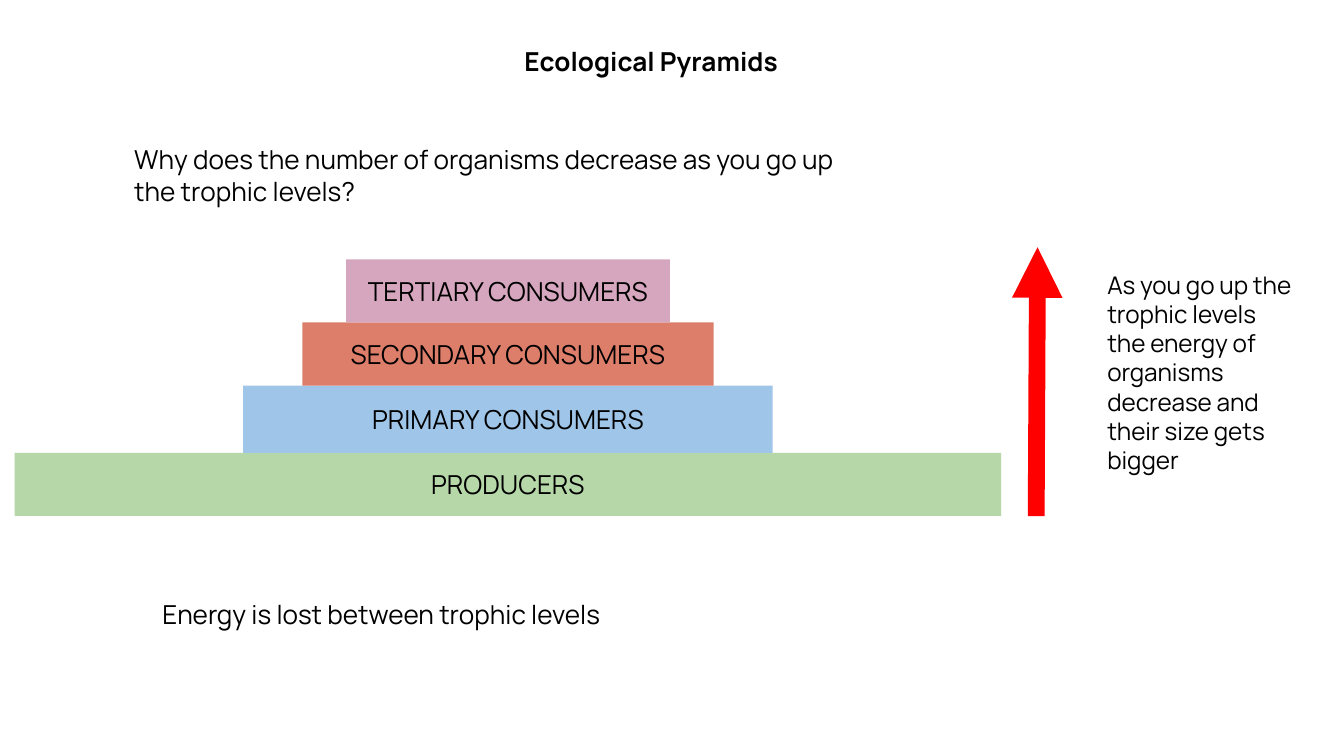
from pptx import Presentation
from pptx.dml.color import RGBColor
from pptx.enum.shapes import MSO_CONNECTOR, MSO_SHAPE
from pptx.enum.text import MSO_ANCHOR, MSO_AUTO_SIZE, PP_ALIGN
from pptx.oxml.ns import qn
from pptx.util import Inches, Pt
from lxml import etree

RECTANGLE = MSO_SHAPE.RECTANGLE
STRAIGHT = MSO_CONNECTOR.STRAIGHT
TOP, MIDDLE = MSO_ANCHOR.TOP, MSO_ANCHOR.MIDDLE
LEFT, CENTER = PP_ALIGN.LEFT, PP_ALIGN.CENTER
NO_FIT, GROW = MSO_AUTO_SIZE.NONE, MSO_AUTO_SIZE.SHAPE_TO_FIT_TEXT

FONT = "Manrope"
BLACK = RGBColor(0x00, 0x00, 0x00)
WHITE = RGBColor(0xFF, 0xFF, 0xFF)
RED = RGBColor(0xFF, 0x00, 0x00)
PINK = RGBColor(0xD5, 0xA6, 0xBD)
CORAL = RGBColor(0xDD, 0x7E, 0x6B)
BLUE = RGBColor(0x9F, 0xC5, 0xE8)
GREEN = RGBColor(0xB6, 0xD7, 0xA8)

# Name, width, height and colour, from the top of the pyramid down
TROPHIC_LEVELS = [
    ("TERTIARY CONSUMERS", 2.41, 0.47, PINK),
    ("SECONDARY CONSUMERS", 3.06, 0.47, CORAL),
    ("PRIMARY CONSUMERS", 3.94, 0.5, BLUE),
    ("PRODUCERS", 7.34, 0.47, GREEN),
]


def write_text(shape, text, size=14, bold=False, align=LEFT, anchor=TOP, fit=GROW):
    frame = shape.text_frame
    frame.word_wrap = True
    frame.auto_size = fit
    frame.vertical_anchor = anchor
    frame.margin_left = frame.margin_right = Inches(0.1)
    frame.margin_top = frame.margin_bottom = Inches(0.1)
    paragraph = frame.paragraphs[0]
    paragraph.alignment = align
    run = paragraph.add_run()
    run.text = text
    run.font.name = FONT
    run.font.size = Pt(size)
    run.font.bold = bold
    run.font.color.rgb = BLACK


def add_title(slide, left, top, width, height):
    title = slide.shapes.title
    title.left, title.top = Inches(left), Inches(top)
    title.width, title.height = Inches(width), Inches(height)
    write_text(title, "Ecological Pyramids ", bold=True, align=CENTER)


def add_note(slide, left, top, width, height, text, size=14):
    box = slide.shapes.add_textbox(
        Inches(left), Inches(top), Inches(width), Inches(height))
    write_text(box, text, size=size)


def add_pyramid(slide, left, bottom, width):
    """Stack the trophic levels up from the bottom, centred in the given width."""
    for name, level_width, height, color in reversed(TROPHIC_LEVELS):
        bottom -= height
        level = slide.shapes.add_shape(
            RECTANGLE, Inches(left + (width - level_width) / 2), Inches(bottom),
            Inches(level_width), Inches(height))
        level.shadow.inherit = False
        level.fill.solid()
        level.fill.fore_color.rgb = color
        level.line.fill.background()
        write_text(level, name, align=CENTER, anchor=MIDDLE, fit=NO_FIT)


def add_up_arrow(slide, left, top, width, height):
    arrow = slide.shapes.add_connector(
        STRAIGHT, Inches(left), Inches(top + height),
        Inches(left + width), Inches(top))
    arrow.line.color.rgb = RED
    arrow.line.width = Pt(9)
    line = arrow.line._get_or_add_ln()
    etree.SubElement(line, qn("a:tailEnd"), type="triangle", w="med", len="med")
    etree.SubElement(arrow._element.spPr, qn("a:effectLst"))


def main():
    presentation = Presentation()
    presentation.slide_width = Inches(10)
    presentation.slide_height = Inches(10) * 9 // 16
    slide = presentation.slides.add_slide(presentation.slide_layouts[5])
    slide.background.fill.solid()
    slide.background.fill.fore_color.rgb = WHITE

    add_pyramid(slide, 0.11, 3.84, 7.34)
    add_up_arrow(slide, 7.71, 1.84, 0.01, 2)
    add_note(slide, 8.14, 1.91, 1.58, 1.95,
             "As you go up the trophic levels the energy of organisms "
             "decrease and their size gets bigger", size=13)
    add_title(slide, 2.97, 0.24, 3.79, 0.44)
    add_note(slide, 0.9, 0.97, 5.65, 0.67,
             "Why does the number of organisms decrease as you go up "
             "the trophic levels?")
    add_note(slide, 1.11, 4.35, 5.65, 0.44,
             "Energy is lost between trophic levels")
    presentation.save("out.pptx")


if __name__ == "__main__":
    main()
